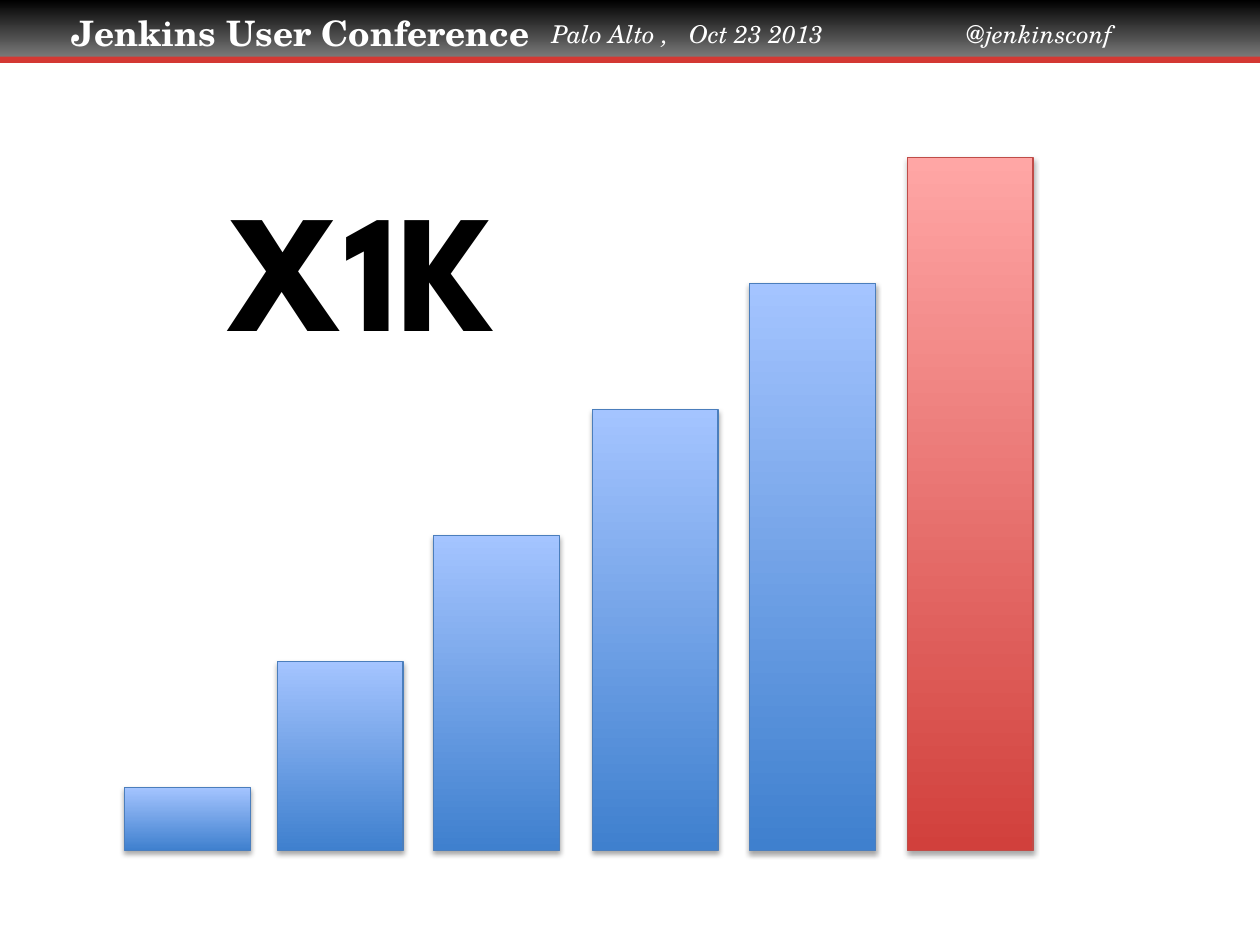
from lxml import etree
from pptx import Presentation
from pptx.dml.color import RGBColor
from pptx.enum.shapes import MSO_SHAPE
from pptx.enum.text import MSO_ANCHOR, PP_ALIGN
from pptx.oxml.ns import qn
from pptx.util import Inches, Pt

RECTANGLE = MSO_SHAPE.RECTANGLE
LEFT, CENTER = PP_ALIGN.LEFT, PP_ALIGN.CENTER
TOP, MIDDLE = MSO_ANCHOR.TOP, MSO_ANCHOR.MIDDLE

SLIDE_WIDTH, SLIDE_HEIGHT = 10, 7.5
HEADER_FONT, HEADLINE_FONT = "TeX Gyre Schola", "League Spartan"
COLORS = {
    "white": "FFFFFF", "black": "000000", "gray": "808080", "stripe": "D33833",
    "blue dark": "3F80CE", "blue light": "A4C4FF", "blue line": "4B7EBC",
    "red dark": "D1403C", "red light": "FFA6A5", "red line": "BF4C48",
}

CONFERENCE = "Jenkins User Conference"
EVENT_DETAILS = ["Palo Alto ,", "Oct 23 2013", "@jenkinsconf"]
EVENT_TABS = [1.09, 3.29]
HEADLINE = "X1K"

# Left edge and colour of each bar; every bar is one step taller than the last
BARS = [(0.99, "blue"), (2.2, "blue"), (3.44, "blue"),
        (4.7, "blue"), (5.95, "blue"), (7.2, "red")]
BAR_WIDTH, BAR_BASE, FIRST_HEIGHT, HEIGHT_STEP = 1, 6.75, 0.5, 1


def color(name):
    return RGBColor.from_string(COLORS[name])


def add_rectangle(slide, box, fill, angle=90, line=None):
    """Fill with one colour name, or with a gradient from a pair of names."""
    shape = slide.shapes.add_shape(RECTANGLE, *map(Inches, box))
    shape.shadow.inherit = False
    if isinstance(fill, tuple):
        shape.fill.gradient()
        shape.fill.gradient_angle = angle
        for stop, name in zip(shape.fill.gradient_stops, fill):
            stop.color.rgb = color(name)
    else:
        shape.fill.solid()
        shape.fill.fore_color.rgb = color(fill)
    if line:
        shape.line.color.rgb = color(line)
        shape.line.width = Pt(0.75)
    else:
        shape.line.fill.background()
    return shape


def add_drop_shadow(shape):
    effects = shape._element.spPr.find(qn("a:effectLst"))
    shadow = etree.SubElement(effects, qn("a:outerShdw"), blurRad=str(Pt(3.1)),
                              dist=str(Pt(1.8)), dir="5400000", rotWithShape="0")
    shade = etree.SubElement(shadow, qn("a:srgbClr"), val=COLORS["black"])
    etree.SubElement(shade, qn("a:alpha"), val="35000")


def write_text(shape, text, *, size, font, ink, bold=False, italic=False,
               align=LEFT, anchor=TOP, insets=(0.1, 0.05, 0.1, 0.05), tabs=()):
    frame = shape.text_frame
    frame.word_wrap = True
    frame.vertical_anchor = anchor
    (frame.margin_left, frame.margin_top,
     frame.margin_right, frame.margin_bottom) = map(Inches, insets)
    paragraph = frame.paragraphs[0]
    paragraph.text = text
    paragraph.alignment = align
    if tabs:
        tab_list = etree.SubElement(paragraph._p.get_or_add_pPr(), qn("a:tabLst"))
        for position in tabs:
            etree.SubElement(tab_list, qn("a:tab"), pos=str(Inches(position)), algn="l")
    style = paragraph.font
    style.size, style.name = Pt(size), font
    style.bold, style.italic = bold, italic
    style.color.rgb = color(ink)


def add_header(slide):
    banner = add_rectangle(slide, (0, 0, SLIDE_WIDTH, 0.48), ("black", "gray"), angle=270)
    write_text(banner, CONFERENCE, size=20, font=HEADER_FONT, ink="white", bold=True,
               anchor=MIDDLE, insets=(0.57, 0.06, 0.1, 0.03))
    add_rectangle(slide, (0, 0.45, SLIDE_WIDTH, 0.05), "stripe")
    details = slide.shapes.add_textbox(*map(Inches, (4.28, 0.1, 4.99, 0.34)))
    write_text(details, "\t".join(EVENT_DETAILS), size=14, font=HEADER_FONT,
               ink="white", italic=True, tabs=EVENT_TABS)


def add_bars(slide):
    for index, (left, hue) in enumerate(BARS):
        height = FIRST_HEIGHT + index * HEIGHT_STEP
        bar = add_rectangle(slide, (left, BAR_BASE - height, BAR_WIDTH, height),
                            (f"{hue} dark", f"{hue} light"), line=f"{hue} line")
        add_drop_shadow(bar)


def main():
    presentation = Presentation()
    presentation.slide_width = Inches(SLIDE_WIDTH)
    presentation.slide_height = Inches(SLIDE_HEIGHT)
    slide = presentation.slides.add_slide(presentation.slide_layouts[6])
    add_header(slide)
    add_bars(slide)
    headline = slide.shapes.add_textbox(*map(Inches, (0.9, 1.25, 3.94, 1.72)))
    write_text(headline, HEADLINE, size=96, font=HEADLINE_FONT, ink="black",
               bold=True, align=CENTER)
    presentation.save("out.pptx")


if __name__ == "__main__":
    main()
